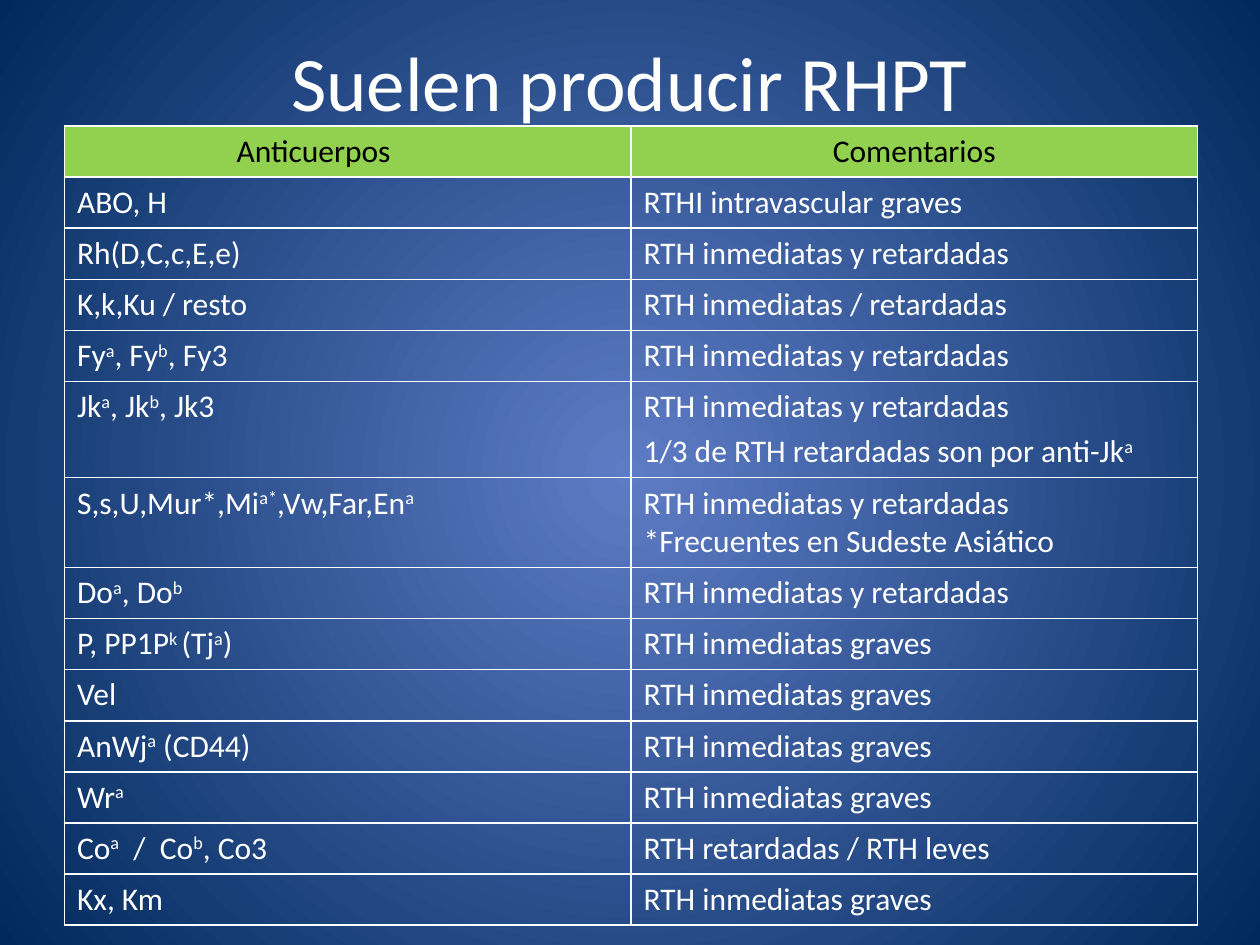
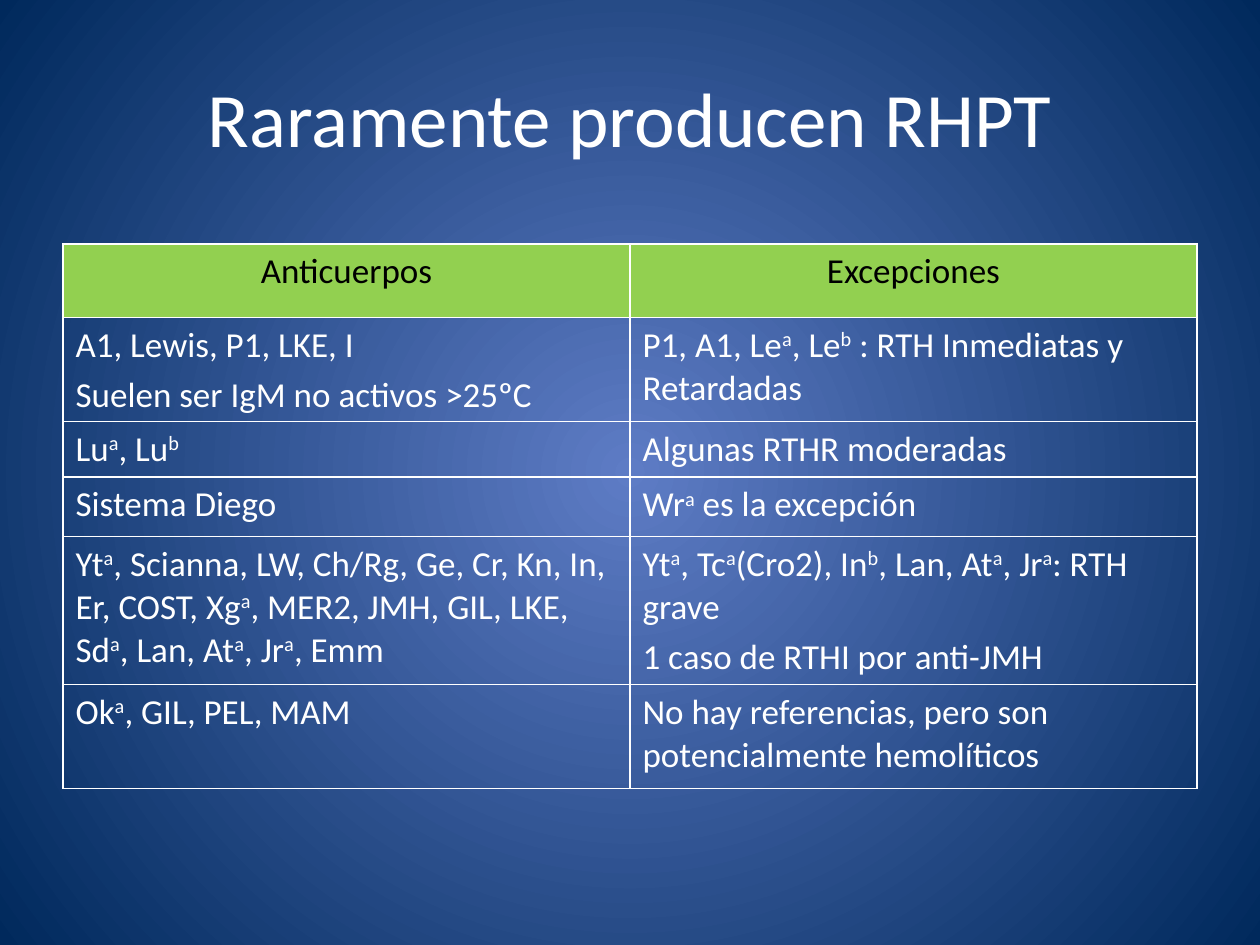
from lxml import etree
from pptx import Presentation
from pptx.dml.color import RGBColor
from pptx.enum.text import MSO_ANCHOR, PP_ALIGN
from pptx.oxml.ns import qn
from pptx.util import Cm, Pt

MID = MSO_ANCHOR.MIDDLE
CENTER = PP_ALIGN.CENTER
LEFT = PP_ALIGN.LEFT
FACE = "Calibri"
COLORS = {"glow": "5E7CC5", "navy": "00295C", "head": "92D050",
          "dark": "000000", "light": "FFFFFF"}

# Table texts: {x} is superscript, a list holds several paragraphs
BOTH = "RTH inmediatas y retardadas"
GRAVE = "RTH inmediatas graves"
USUAL = [
    ("Anticuerpos", "Comentarios"),
    ("ABO, H", "RTHI intravascular graves"),
    ("Rh(D,C,c,E,e)", BOTH),
    ("K,k,Ku / resto", "RTH inmediatas / retardadas"),
    ("Fy{a}, Fy{b}, Fy3", BOTH),
    ("Jk{a}, Jk{b}, Jk3",
     [BOTH, "1/3 de RTH retardadas son por anti-Jk{a}"]),
    ("S,s,U,Mur*,Mi{a*},Vw,Far,En{a}",
     BOTH + "\v*Frecuentes en Sudeste Asiático"),
    ("Do{a}, Do{b}", BOTH),
    ("P, PP1P{k }(Tj{a})", GRAVE),
    ("Vel", GRAVE),
    ("AnWj{a} (CD44)", GRAVE),
    ("Wr{a}", GRAVE),
    ("Co{a}  /  Co{b}, Co3", "RTH retardadas / RTH leves"),
    ("Kx, Km", GRAVE),
]
RARE = [
    ("Anticuerpos", "Excepciones"),
    (["A1, Lewis, P1, LKE, I", "Suelen ser IgM no activos >25ºC"],
     "P1, A1, Le{a}, Le{b} : RTH Inmediatas y Retardadas"),
    ("Lu{a}, Lu{b}", "Algunas RTHR moderadas"),
    ("Sistema Diego", "Wr{a} es la excepción"),
    ("Yt{a}, Scianna, LW, Ch/Rg, Ge, Cr, Kn, In, Er, COST, Xg{a}, "
     "MER2, JMH, GIL, LKE, Sd{a}, Lan, At{a}, Jr{a}, Emm",
     ["Yt{a}, Tc{a}(Cro2), In{b}, Lan, At{a}, Jr{a}: RTH grave",
      "1 caso de RTHI por anti-JMH"]),
    ("Ok{a}, GIL, PEL, MAM",
     "No hay referencias, pero son potencialmente hemolíticos"),
]


def rgb(name):
    return RGBColor.from_string(COLORS[name])


class Deck:
    """Holds the shared style and the current slide."""

    def __init__(self):
        self.prs = Presentation()
        self.prs.slide_width, self.prs.slide_height = Cm(25.4), Cm(19.05)
        self.slide = None
        self.backdrop()

    def backdrop(self):
        """Radial gradient on the master, seen on every slide."""
        master = self.prs.slide_master
        fill = master.background.fill
        fill.gradient()
        for stop, name in zip(fill.gradient_stops, ("glow", "navy")):
            stop.color.rgb = rgb(name)
        grad = next(master.element.iter(qn("a:gradFill")))
        grad.remove(grad.find(qn("a:lin")))
        ring = etree.SubElement(grad, qn("a:path"), path="circle")
        etree.SubElement(ring, qn("a:fillToRect"),
                         dict.fromkeys("ltrb", "50000"))

    def page(self):
        self.slide = self.prs.slides.add_slide(self.prs.slide_layouts[6])

    def label(self, para, text, size, color, align):
        para.alignment = align
        font = para.font
        font.name, font.size = FACE, Pt(size)
        font.color.rgb = rgb(color)
        for i, part in enumerate(text.replace("}", "{").split("{")):
            for j, line in enumerate(part.split("\v")):
                if j:
                    para.add_line_break()
                if line:
                    run = para.add_run()
                    run.text = line
                    if i % 2:
                        run.font._element.set("baseline", "30000")

    def title(self, text, top, height):
        box = self.slide.shapes.add_textbox(
            Cm(1.27), Cm(top), Cm(22.86), Cm(height))
        frame = box.text_frame
        frame.word_wrap = True
        frame.vertical_anchor = MID
        self.label(frame.paragraphs[0], text, 44, "light", CENTER)

    def border(self, cell):
        props = cell._tc.get_or_add_tcPr()
        for side in "LRTB":
            line = etree.SubElement(props, qn("a:ln" + side),
                                    w=str(Pt(1)))
            fill = etree.SubElement(line, qn("a:solidFill"))
            etree.SubElement(fill, qn("a:srgbClr"), val=COLORS["light"])

    def cell(self, cell, texts, size, head):
        self.border(cell)
        if head:
            cell.fill.solid()
            cell.fill.fore_color.rgb = rgb("head")
        else:
            cell.fill.background()
        frame = cell.text_frame
        for i, text in enumerate([texts] if isinstance(texts, str) else texts):
            para = frame.add_paragraph() if i else frame.paragraphs[0]
            if i:
                para.space_before = Pt(size * 0.2)
            self.label(para, text, size, "dark" if head else "light",
                       CENTER if head else LEFT)

    def table(self, data, left, top, width, tall, size):
        grid = self.slide.shapes.add_table(
            len(data), 2, Cm(left), Cm(top), Cm(width), Cm(sum(tall))).table
        grid.first_row = grid.horz_banding = False
        for r, (row, high) in enumerate(zip(data, tall)):
            grid.rows[r].height = Cm(high)
            for c, texts in enumerate(row):
                self.cell(grid.cell(r, c), texts, size, r == 0)
        return grid


def main():
    deck = Deck()

    # Antibodies that usually cause reactions
    deck.page()
    tall = [1.03] * 5 + [1.94, 1.81] + [1.03] * 7
    grid = deck.table(USUAL, 1.3, 2.54, 22.84, tall, 18)
    grid.cell(0, 0).margin_right = Cm(1.63)  # heading sits left of centre
    deck.title("Suelen producir RHPT", 0.53, 2.21)

    # Antibodies that rarely cause reactions
    deck.page()
    tall = [1.48, 2.1, 1.12, 1.2, 2.98, 2.1]
    deck.table(RARE, 1.27, 4.92, 22.86, tall, 20)
    deck.title("Raramente producen RHPT", 0.76, 3.18)

    deck.prs.save("out.pptx")


if __name__ == "__main__":
    main()
